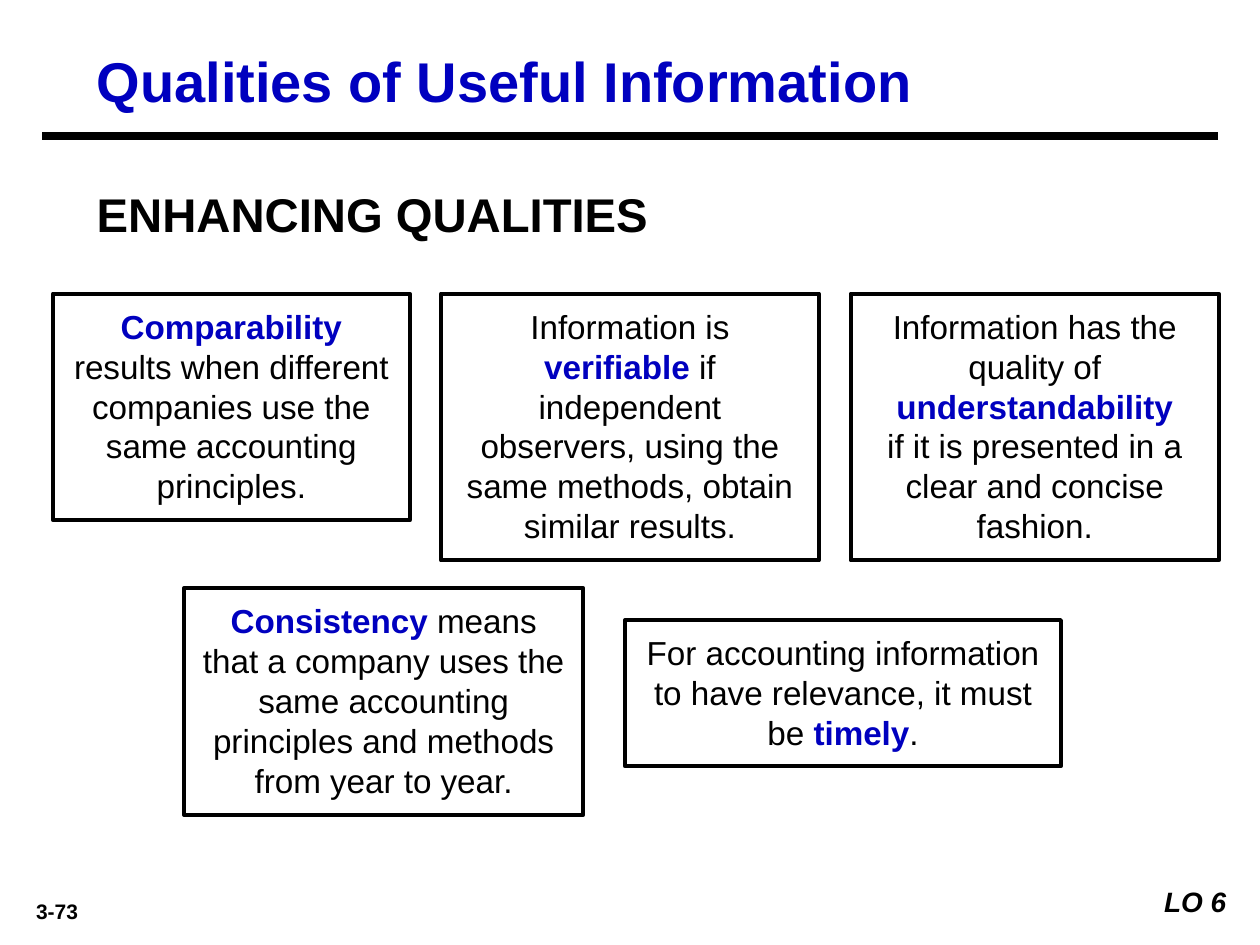
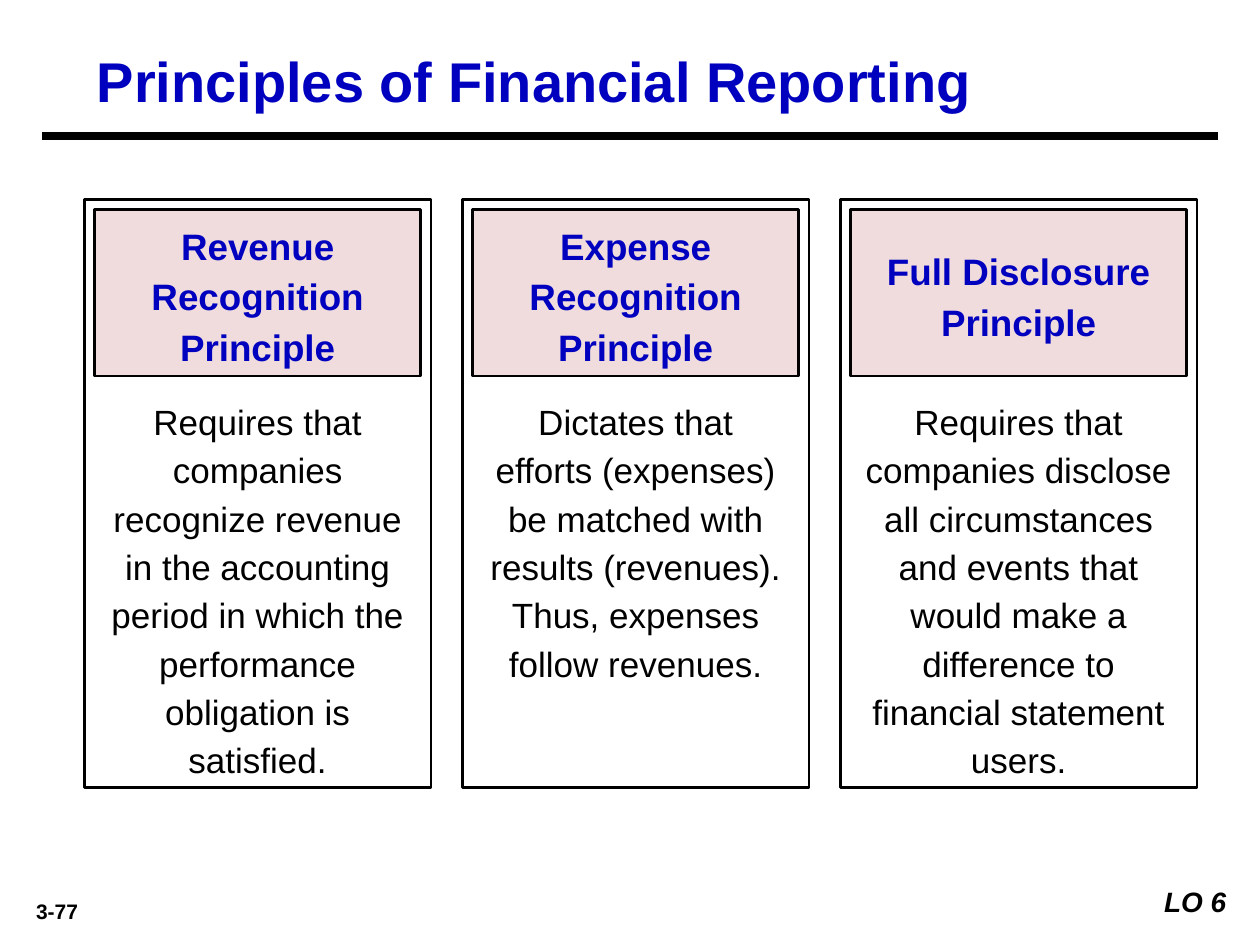
from lxml.etree import SubElement
from pptx import Presentation
from pptx.dml.color import RGBColor
from pptx.enum.shapes import MSO_CONNECTOR, MSO_SHAPE
from pptx.enum.text import MSO_ANCHOR, MSO_AUTO_SIZE, PP_ALIGN
from pptx.oxml.ns import qn
from pptx.util import Cm, Pt

FONT = "Arial"
BLACK = "000000"
WHITE = "FFFFFF"
BLUE = "0000BF"
PINK = "F0DCDC"

QUALITIES = [
    ((1.07, 5.92, 7.19, 4.57),
     "*Comparability* results when different companies use the same accounting principles."),
    ((8.89, 5.92, 7.62, 5.38),
     "Information is *verifiable* if independent\n"
     "observers, using the same methods, obtain similar results."),
    ((17.15, 5.92, 7.42, 5.38),
     "Information has the quality of *understandability*\n"
     "if it is presented in a clear and concise fashion."),
    ((3.71, 11.86, 8.05, 4.57),
     "*Consistency* means that a company uses the same accounting\n"
     "principles and methods from year to year."),
    ((12.6, 12.5, 8.79, 2.95),
     "For accounting information to have relevance, it must be *timely*."),
]

PRINCIPLES = [
    (6.99, "Revenue Recognition Principle",
     "Requires that companies recognize revenue in the accounting period "
     "in which the performance obligation is satisfied."),
    (6.99, "Expense Recognition Principle",
     "Dictates that efforts (expenses) be matched with results (revenues). "
     "Thus, expenses follow revenues."),
    (7.19, "Full Disclosure Principle",
     "Requires that companies disclose all circumstances\n"
     "and events that would make a difference to financial statement users."),
]


def color(value):
    """Turn a hex string into a colour."""
    return RGBColor.from_string(value)


def lengths(box):
    """Turn a sequence of centimetres into lengths."""
    return [Cm(value) for value in box]


def write(shape, text, size=19, fill=BLACK, bold=False, italic=False,
          align=PP_ALIGN.CENTER, anchor=MSO_ANCHOR.TOP, spacing=1.0, inset=(0.25, 0.13)):
    """Write lines of text into a shape; words between asterisks are bold blue."""
    frame = shape.text_frame
    frame.word_wrap = True
    frame.auto_size = MSO_AUTO_SIZE.NONE
    frame.vertical_anchor = anchor
    frame.margin_left = frame.margin_right = Cm(inset[0])
    frame.margin_top = frame.margin_bottom = Cm(inset[1])
    for number, line in enumerate(text.split("\n")):
        paragraph = frame.add_paragraph() if number else frame.paragraphs[0]
        paragraph.alignment = align
        paragraph.line_spacing = spacing
        for index, piece in enumerate(line.split("*")):
            if not piece:
                continue
            accented = index % 2 == 1
            run = paragraph.add_run()
            run.text = piece
            run.font.name = FONT
            run.font.size = Pt(size)
            run.font.bold = bold or accented
            run.font.italic = italic
            run.font.color.rgb = color(BLUE if accented else fill)


def add_text(slide, box, text, **text_format):
    """Add a text box."""
    write(slide.shapes.add_textbox(*lengths(box)), text, **text_format)


def add_box(slide, box, fill=None, width=1.5):
    """Add a black-outlined rectangle."""
    shape = slide.shapes.add_shape(MSO_SHAPE.RECTANGLE, *lengths(box))
    shape.shadow.inherit = False
    if fill:
        shape.fill.solid()
        shape.fill.fore_color.rgb = color(fill)
    else:
        shape.fill.background()
    shape.line.color.rgb = color(BLACK)
    shape.line.width = Pt(width)
    return shape


def add_frame(presentation, title, number):
    """Add a slide with its title, rule, page number and objective."""
    slide = presentation.slides.add_slide(presentation.slide_layouts[5])
    heading = slide.shapes.title
    heading.left, heading.top, heading.width, heading.height = lengths((1.7, 0.85, 22.86, 1.55))
    write(heading, title, size=32, fill=BLUE, bold=True,
          align=PP_ALIGN.LEFT, anchor=MSO_ANCHOR.MIDDLE)
    rule = slide.shapes.add_connector(MSO_CONNECTOR.STRAIGHT, *lengths((0.85, 2.75, 24.55, 2.75)))
    rule.line.color.rgb = color(BLACK)
    rule.line.width = Pt(4.5)
    SubElement(rule._element.spPr, qn("a:effectLst"))
    add_text(slide, (0.2, 17.98, 1.9, 0.77), number, size=12, bold=True)
    add_text(slide, (22.43, 17.7, 2.54, 0.94), "LO 6", size=16, bold=True, italic=True,
             align=PP_ALIGN.RIGHT)
    return slide


def add_card(slide, box, heading, body, pad=0.21):
    """Add a principle card: outline, tinted heading and explanation."""
    left, top, width, height = box
    inner_left, inner_width = left + pad, width - 2 * pad
    add_box(slide, box)
    header = add_box(slide, (inner_left, top + pad, inner_width, 3.35), PINK)
    write(header, heading, size=21, fill=BLUE, bold=True,
          anchor=MSO_ANCHOR.MIDDLE, spacing=1.15)
    add_text(slide, (inner_left, top + 3.8, inner_width, height - 3.8), body,
             size=20, spacing=1.15)


def build_qualities(presentation):
    """Build the slide of enhancing qualities."""
    slide = add_frame(presentation, "Qualities of Useful Information", "3-73")
    add_text(slide, (1.7, 3.6, 15.54, 1.45), "ENHANCING QUALITIES", size=27, bold=True,
             align=PP_ALIGN.LEFT)
    for box, text in QUALITIES:
        write(add_box(slide, box, WHITE, 2.25), text, inset=(0.38, 0.25))


def build_principles(presentation):
    """Build the slide of reporting principles."""
    slide = add_frame(presentation, "Principles of Financial Reporting", "3-77")
    for column, (width, heading, body) in enumerate(PRINCIPLES):
        add_card(slide, (1.7 + 7.62 * column, 4.02, width, 11.86), heading, body)


def main():
    """Build and save the presentation."""
    presentation = Presentation()
    presentation.slide_width, presentation.slide_height = Cm(25.4), Cm(19.05)
    build_qualities(presentation)
    build_principles(presentation)
    presentation.save("out.pptx")


if __name__ == "__main__":
    main()
